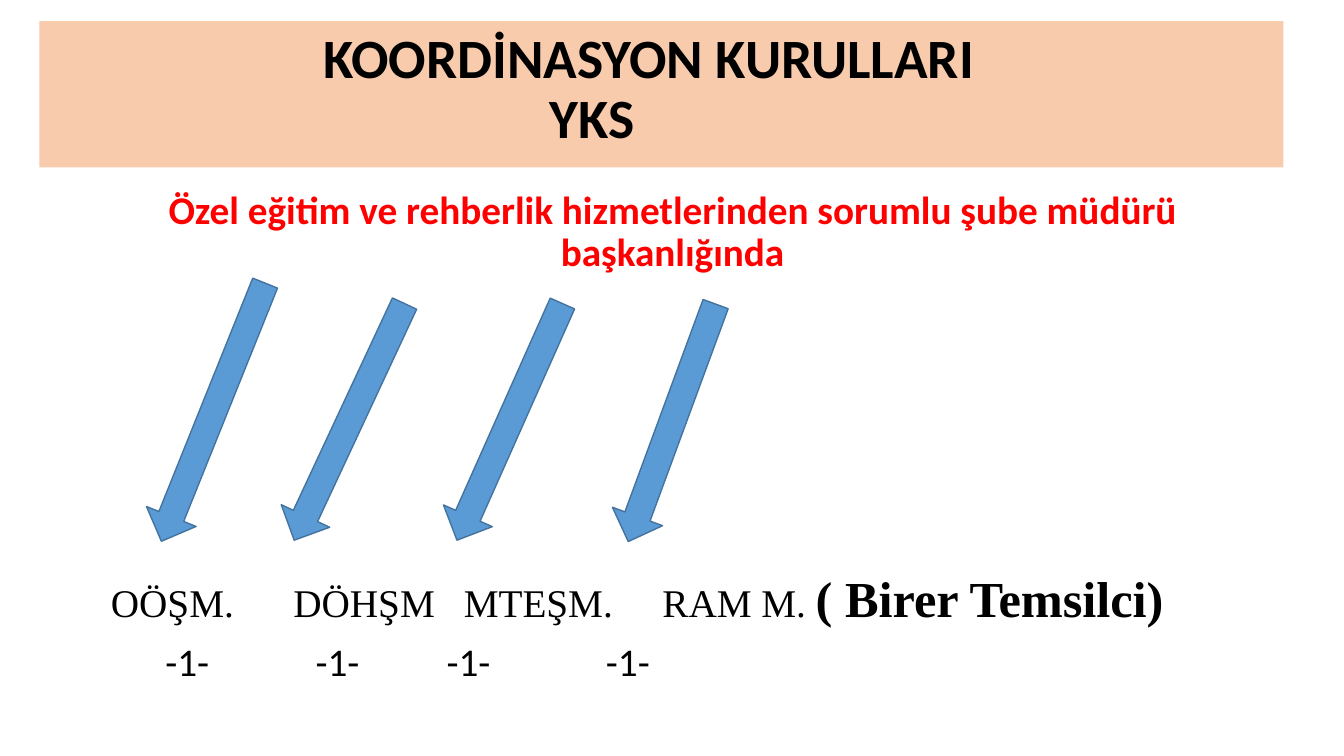
from dataclasses import dataclass

from lxml.etree import SubElement
from pptx import Presentation
from pptx.dml.color import RGBColor as RGB
from pptx.enum.shapes import MSO_SHAPE as Shape
from pptx.enum.text import MSO_ANCHOR as Anchor, PP_ALIGN as Align
from pptx.oxml.ns import qn
from pptx.util import Inches, Pt


@dataclass(frozen=True)
class Theme:
    """Colours, fonts and type sizes."""
    banner: RGB = RGB(0xF8, 0xCB, 0xAD)
    arrow: RGB = RGB(0x5B, 0x9B, 0xD5)
    outline: RGB = RGB(0x43, 0x73, 0x9E)
    ink: RGB = RGB(0, 0, 0)
    accent: RGB = RGB(0xFF, 0, 0)
    sans: str = "Calibri"
    serif: str = "Times New Roman"
    title: float = 39.6
    strong: float = 36
    body: float = 28


class Builder:
    """Draws styled elements on one slide."""

    def __init__(self, s, theme):
        """Keep the slide and its theme."""
        self.s, self.t = s, theme

    def shape(self, kind, box, fill, line=None, rotation=0):
        """Add a flat preset shape."""
        sp = self.s.shapes.add_shape(kind, *map(Inches, box))
        sp.shadow.inherit = False
        sp.rotation = rotation
        sp.fill.solid()
        sp.fill.fore_color.rgb = fill
        if line is None:
            sp.line.fill.background()
        else:
            sp.line.color.rgb = line
            sp.line.width = Pt(1)
        return sp

    def textbox(self, box):
        """Add a wrapping text box without side margins."""
        tf = self.s.shapes.add_textbox(*map(Inches, box)).text_frame
        tf.word_wrap = True
        tf.margin_left = tf.margin_right = 0
        return tf

    def paragraph(self, tf, align=Align.LEFT, indent=0, tabs=()):
        """Start the next paragraph of a frame."""
        first = not tf.paragraphs[0].runs
        p = tf.paragraphs[0] if first else tf.add_paragraph()
        p.alignment = align
        p.line_spacing = 0.9
        pPr = p._p.get_or_add_pPr()
        pPr.set("marL", str(Inches(indent)))
        if tabs:
            stops = SubElement(pPr, qn("a:tabLst"))
            for pos in tabs:
                SubElement(stops, qn("a:tab"), pos=str(Inches(pos)), algn="l")
        return p

    def run(self, p, text, size, font=None, color=None, bold=False):
        """Add one styled run."""
        r = p.add_run()
        r.text = text
        r.font.size = Pt(size)
        r.font.name = font or self.t.sans
        r.font.bold = bold
        r.font.color.rgb = color or self.t.ink

    def banner(self, box, lines):
        """Add the title band with its indented lines."""
        sp = self.shape(Shape.RECTANGLE, box, self.t.banner)
        tf = sp.text_frame
        tf.vertical_anchor = Anchor.MIDDLE
        tf.margin_bottom = Inches(0.13)
        for text, indent in lines:
            p = self.paragraph(tf, indent=indent)
            self.run(p, text, self.t.title, bold=True)

    def arrow(self, kind, box, rotation):
        """Add a slanted block arrow."""
        self.shape(kind, box, self.t.arrow, self.t.outline, rotation)


def main():
    """Build and save the slide."""
    prs = Presentation()
    prs.slide_width, prs.slide_height = Inches(13.33), Inches(7.5)
    t = Theme()
    b = Builder(prs.slides.add_slide(prs.slide_layouts[6]), t)

    b.banner((0.39, 0.21, 12.34, 1.45),
             [("KOORDİNASYON KURULLARI", 2.72), ("YKS", 4.96)])

    p = b.paragraph(b.textbox((1.02, 1.84, 11.3, 0.95)), Align.CENTER)
    b.run(p, "Özel eğitim ve rehberlik hizmetlerinden sorumlu şube müdürü "
             "başkanlığında", t.body, color=t.accent, bold=True)

    for kind, box, rotation in (
        (Shape.DOWN_ARROW, (1.85, 2.71, 0.53, 2.76), 21.9),
        (Shape.RIGHT_ARROW, (2.17, 3.92, 2.59, 0.53), 115),
        (Shape.RIGHT_ARROW, (3.77, 3.92, 2.57, 0.53), 114),
        (Shape.DOWN_ARROW, (6.4, 2.94, 0.53, 2.51), 20.2),
    ):
        b.arrow(kind, box, rotation)

    tf = b.textbox((1.1, 5.65, 11.22, 1.4))
    members = ["OÖŞM.", "DÖHŞM", "MTEŞM.", "RAM M."]
    p = b.paragraph(tf, tabs=(1.81, 3.5, 5.47, 6.99))
    b.run(p, "\t".join(members) + "\t", t.body, t.serif)
    b.run(p, "( Birer Temsilci)", t.strong, t.serif, bold=True)
    p = b.paragraph(tf, tabs=(0.54, 2.03, 3.33, 4.91))
    p.space_before = Pt(10)
    b.run(p, "\t-1-" * len(members), t.body)

    prs.save("out.pptx")


if __name__ == "__main__":
    main()
